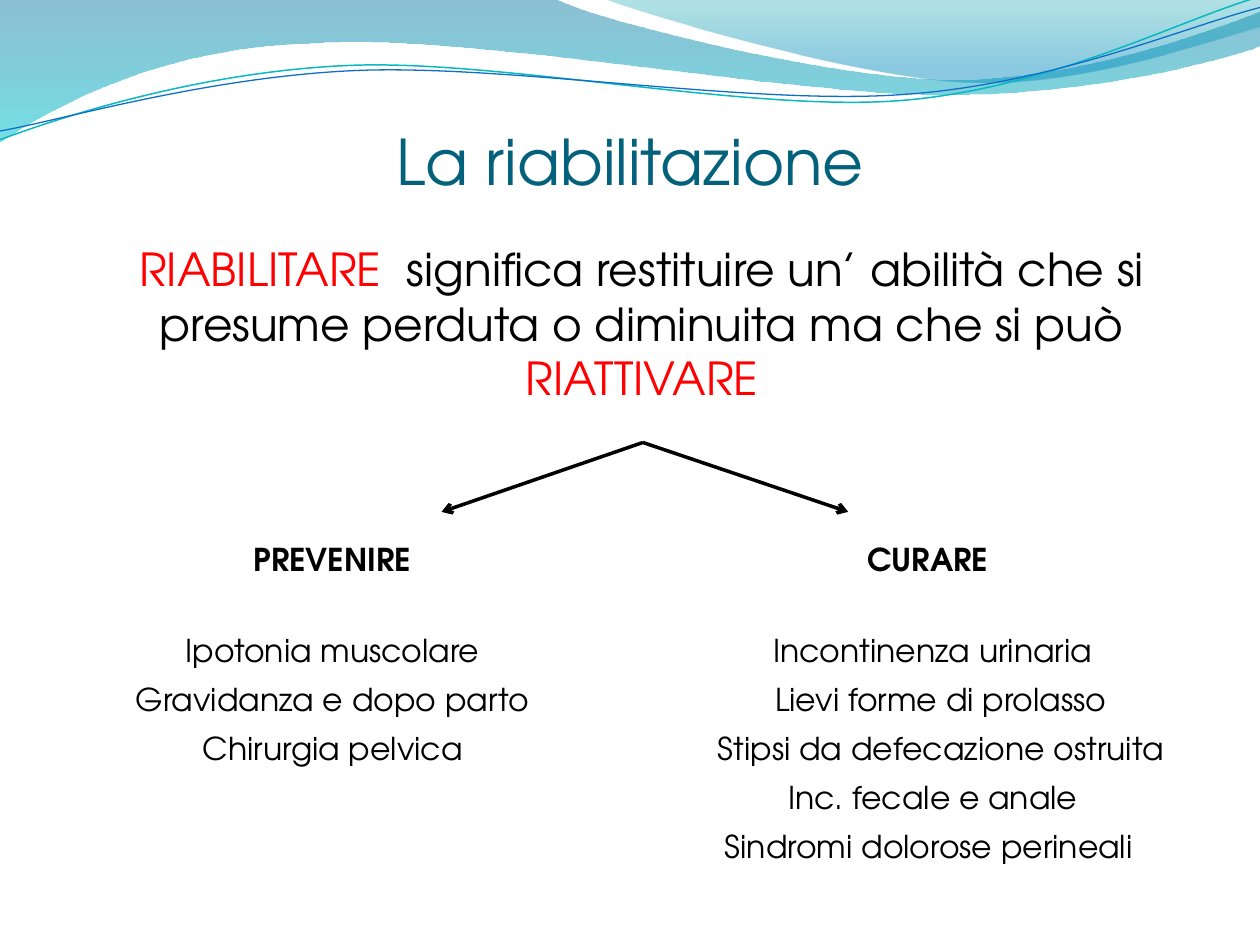
import math

from lxml import etree
from pptx import Presentation
from pptx import util as u
from pptx.dml.color import RGBColor
from pptx.enum import shapes, text
from pptx.oxml.ns import qn

FONT = "TeX Gyre Adventor"
BLACK = RGBColor(0x00, 0x00, 0x00)
RED = RGBColor(0xFF, 0x00, 0x00)
TITLE_BLUE = RGBColor(0x04, 0x61, 0x7B)
DEEP_BLUE = RGBColor(0x00, 0x74, 0xA1)
CYAN = RGBColor(0x00, 0xC6, 0xCF)
TEAL = RGBColor(0x00, 0xA1, 0xA9)
SKY = RGBColor(0x00, 0x8B, 0xBF)
LINE_TEAL = RGBColor(0x0A, 0xB8, 0xBF)
LINE_BLUE = RGBColor(0x0F, 0x6F, 0xC6)

BROAD_WAVE = [
    (0, 0), (4.4, -0.01), (4.76, 0.17, 6.64, 0.63, 7.58, 0.63),
    (8.53, 0.63, 9.58, 0.26, 10, 0.09), (10.01, 0.36),
    (9.83, 0.44, 8.7, 0.76, 7.46, 0.75), (6.22, 0.75, 3.82, 0.28, 2.57, 0.34),
    (1.29, 0.36, 0.46, 0.83, -0.01, 1.13),
]
RIGHT_WAVE = [
    (4.79, -0.01), (5.09, 0.11, 6.82, 0.62, 7.69, 0.65),
    (8.56, 0.69, 9.61, 0.32, 10, 0.21), (10, 0),
]
TEAL_CURVE = [
    (0, 1.11), (0.48, 0.93, 1.58, 0.57, 2.77, 0.52),
    (3.95, 0.47, 5.93, 0.89, 7.13, 0.8), (8.33, 0.71, 9.38, 0.15, 9.98, -0.02),
]
BLUE_CURVE = [
    (0, 1.04), (0.47, 0.96, 1.64, 0.61, 2.83, 0.56),
    (4.03, 0.51, 5.97, 0.84, 7.17, 0.75), (8.36, 0.67, 9.41, 0.21, 10, 0.06),
]
TILT = 357.3
PIVOT = (5, 0.57)


def turn(point, degrees):
    """Turn a point clockwise about the pivot of the thin curves."""
    angle = math.radians(degrees)
    x, y = point[0] - PIVOT[0], point[1] - PIVOT[1]
    return (PIVOT[0] + x * math.cos(angle) - y * math.sin(angle),
            PIVOT[1] + x * math.sin(angle) + y * math.cos(angle))


def add_outline(slide, box, segments, closed, rotation=0):
    """Draw lines and cubic curves given in tenths of the box width."""
    left, top, width = box
    unit = width / 10
    placed = []
    for segment in segments:
        turned = [turn(pair, -rotation) for pair in zip(segment[::2], segment[1::2])]
        placed.append([(round(left + x * unit), round(top + y * unit)) for x, y in turned])
    builder = slide.shapes.build_freeform(*placed[0][-1])
    builder.add_line_segments([points[-1] for points in placed[1:]], close=closed)
    shape = builder.convert_to_shape()
    for element, points in zip(list(shape._element.iter(qn("a:lnTo"))), placed[1:]):
        if len(points) == 3:
            element.tag = qn("a:cubicBezTo")
            element.clear()
            for x, y in points:
                etree.SubElement(element, qn("a:pt"), x=str(x - shape.left), y=str(y - shape.top))
    shape.rotation = rotation
    shape.shadow.inherit = False
    return shape


def add_waves(slide, box):
    """Place the gradient waves and thin curves across the top."""
    waves = [
        (BROAD_WAVE, ((0, DEEP_BLUE, 45), (1, CYAN, 55))),
        (RIGHT_WAVE, ((0, TEAL, 30), (0.8, SKY, 45))),
    ]
    for segments, stops in waves:
        shape = add_outline(slide, box, segments, True)
        shape.line.fill.background()
        shape.fill.gradient()
        shape.fill.gradient_angle = 270
        for stop, (position, color, _) in zip(shape.fill.gradient_stops, stops):
            stop.position = position
            stop.color.rgb = color
        colors = shape._element.spPr.iter(qn("a:srgbClr"))
        for element, (_, _, opacity) in zip(list(colors), stops):
            etree.SubElement(element, qn("a:alpha")).set("val", str(opacity * 1000))
    for segments, color, width in ((TEAL_CURVE, LINE_TEAL, 0.85), (BLUE_CURVE, LINE_BLUE, 0.75)):
        shape = add_outline(slide, box, segments, False, TILT)
        shape.fill.background()
        shape.line.color.rgb = color
        shape.line.width = u.Pt(width)


def add_text(slide, box, paragraphs, size, color=BLACK, bold=False, spacing=None,
             anchor=text.MSO_ANCHOR.TOP):
    """Place centred paragraphs, each a list of (words, colour) runs."""
    frame = slide.shapes.add_textbox(*box).text_frame
    frame.word_wrap = True
    frame.vertical_anchor = anchor
    for index, runs in enumerate(paragraphs):
        paragraph = frame.add_paragraph() if index else frame.paragraphs[0]
        paragraph.alignment = text.PP_ALIGN.CENTER
        paragraph.line_spacing = spacing
        paragraph.font.name = FONT
        paragraph.font.size = u.Pt(size)
        paragraph.font.bold = bold
        paragraph.font.color.rgb = color
        for words, run_color in runs:
            run = paragraph.add_run()
            run.text = words
            if run_color != color:
                run.font.color.rgb = run_color
    return frame


def add_definition(slide, box):
    """Place the sentence that defines rehabilitation."""
    frame = add_text(slide, box, [[
        ("RIABILITARE", RED),
        (" ", BLACK),
        ("significa restituire un’ abilità che si presume perduta o diminuita ma che si può",
         BLACK),
        (" RIATTIVARE", RED),
    ]], 26)
    wide_space = frame.paragraphs[0].runs[1]
    wide_space._r.get_or_add_rPr().set("spc", "720")


def add_arrows(slide, box):
    """Draw two arrows from the top of the box to its lower corners."""
    left, top, width, height = box
    for end_x in (left, left + width):
        connector = slide.shapes.add_connector(
            shapes.MSO_CONNECTOR.STRAIGHT, left + u.Cm(4.06), top, end_x, top + height)
        connector.line.color.rgb = BLACK
        connector.line.width = u.Pt(2)
        line = connector.line._get_or_add_ln()
        etree.SubElement(line, qn("a:tailEnd")).set("type", "arrow")
        etree.SubElement(connector._element.spPr, qn("a:effectLst"))


def add_column(slide, box, heading, heading_left, items, margins=()):
    """Place a bold heading with its list below."""
    left, top, width, height = box
    add_text(slide, (left + heading_left, top, u.Cm(6), u.Cm(1.02)),
             [[(heading, BLACK)]], 18, bold=True)
    gap = u.Cm(1.59)
    frame = add_text(slide, (left, top + gap, width, height - gap),
                     [[(item, BLACK)] for item in items], 18, spacing=1.3)
    for index, side, margin in margins:
        frame.paragraphs[index]._p.get_or_add_pPr().set(side, str(u.Cm(margin)))


def main():
    """Build and save the slide."""
    presentation = Presentation()
    presentation.slide_width = u.Cm(25.4)
    presentation.slide_height = u.Cm(19.05)
    slide = presentation.slides.add_slide(presentation.slide_layouts[6])
    add_waves(slide, (0, 0, presentation.slide_width))
    add_text(slide, (u.Cm(1.27), u.Cm(2.35), u.Cm(22.86), u.Cm(1.78)),
             [[("La riabilitazione", TITLE_BLUE)]], 36, TITLE_BLUE,
             anchor=text.MSO_ANCHOR.MIDDLE)
    add_definition(slide, (u.Cm(1.3), u.Cm(4.74), u.Cm(23.29), u.Cm(4.19)))
    add_column(slide, (u.Cm(2.11), u.Cm(10.77), u.Cm(9.19), u.Cm(4.83)),
               "PREVENIRE", u.Cm(1.59),
               ["Ipotonia muscolare", "Gravidanza e dopo parto", "Chirurgia pelvica"])
    add_column(slide, (u.Cm(13.7), u.Cm(10.77), u.Cm(10.21), u.Cm(6.81)),
               "CURARE", u.Cm(2),
               ["Incontinenza urinaria", "Lievi forme di prolasso",
                "Stipsi da defecazione ostruita", "Inc. fecale e anale",
                "Sindromi dolorose perineali"],
               [(1, "marL", 0.32), (2, "marL", 0.32), (4, "marR", 0.16)])
    add_arrows(slide, (u.Cm(8.9), u.Cm(8.92), u.Cm(8.2), u.Cm(1.4)))
    presentation.save("out.pptx")


if __name__ == "__main__":
    main()
